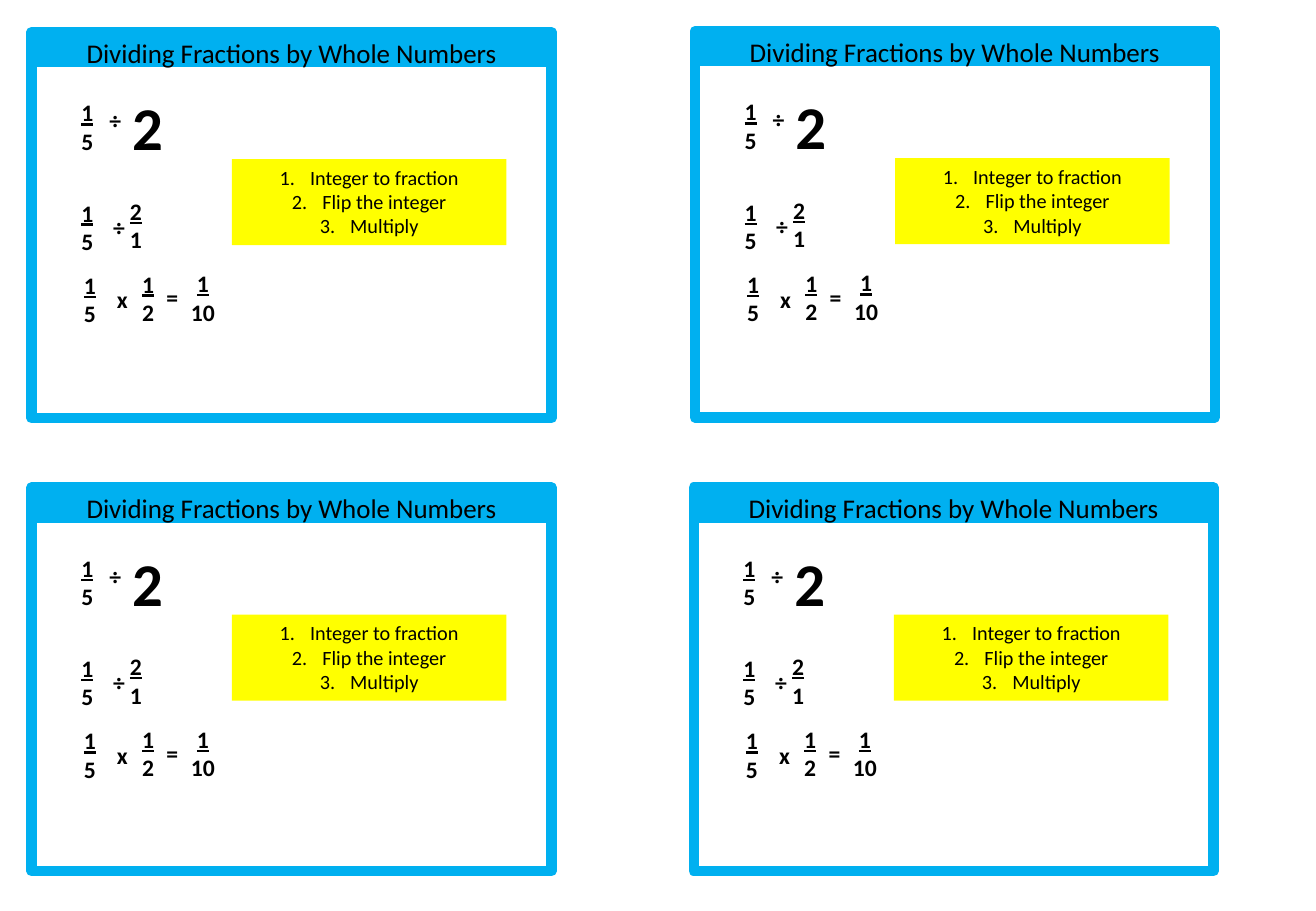
from dataclasses import dataclass

from lxml import etree
from pptx import Presentation
from pptx.dml.color import RGBColor
from pptx.enum.shapes import MSO_SHAPE
from pptx.enum.text import MSO_ANCHOR, PP_ALIGN
from pptx.oxml.ns import qn
from pptx.shapes.autoshape import Shape
from pptx.shapes.group import GroupShape
from pptx.text.text import TextFrame
from pptx.util import Pt

RECTANGLE = MSO_SHAPE.RECTANGLE
CENTER = PP_ALIGN.CENTER
TOP = MSO_ANCHOR.TOP

FONT = "Calibri"
BLUE, YELLOW, BLACK = "00B0F0", "FFFF00", "000000"
CARD_WIDTH = 308.2
FRACTION_SIZE = (34.6, 41)
OPERATOR_SIZE = (33, 24.3)
HEADING = "Dividing Fractions by Whole Numbers"
STEPS = ["Integer to fraction", "Flip the integer", "Multiply"]


@dataclass(frozen=True)
class Card:
    left: float
    top: float
    frame_height: float


@dataclass(frozen=True)
class Fraction:
    numerator: str
    denominator: str
    x: float
    y: float


@dataclass(frozen=True)
class Operator:
    sign: str
    x: float
    y: float


CARDS = [
    Card(18.7, 18, 229),
    Card(411.8, 17.5, 229),
    Card(18.7, 288, 227.5),
    Card(411.1, 288, 227.5),
]

# Places are measured from the top left corner of a card.
FRACTIONS = [
    Fraction("1", "5", 15.8, 36.7),
    Fraction("1", "5", 15.8, 96.1),
    Fraction("2", "1", 44.6, 95),
    Fraction("1", "5", 17.3, 139),
    Fraction("1", "2", 51.8, 138.2),
    Fraction("1", "10", 84.2, 138),
]
OPERATORS = [
    Operator("÷", 33.1, 41.3),
    Operator("÷", 35.3, 104.4),
    Operator("x", 37.4, 147.6),
    Operator("=", 67, 146.4),
]


def color(hex_code: str) -> RGBColor:
    return RGBColor.from_string(hex_code)


def write(frame: TextFrame, lines: list[str], size: float, bold: bool = False) -> None:
    frame.word_wrap = True
    frame.vertical_anchor = TOP
    frame.text = "\n".join(lines)
    for paragraph in frame.paragraphs:
        paragraph.alignment = CENTER
        for run in paragraph.runs:
            run.font.name = FONT
            run.font.size = Pt(size)
            run.font.bold = bold
            run.font.color.rgb = color(BLACK)


def add_rectangle(group: GroupShape, x: float, y: float, width: float, height: float,
                  fill: str | None = None, line: str | None = None,
                  line_width: float = 0.75) -> Shape:
    rectangle = group.shapes.add_shape(RECTANGLE, Pt(x), Pt(y), Pt(width), Pt(height))
    rectangle.shadow.inherit = False
    if fill:
        rectangle.fill.solid()
        rectangle.fill.fore_color.rgb = color(fill)
    else:
        rectangle.fill.background()
    if line:
        rectangle.line.color.rgb = color(line)
        rectangle.line.width = Pt(line_width)
    else:
        rectangle.line.fill.background()
    return rectangle


def add_text(group: GroupShape, x: float, y: float, size: tuple[float, float],
             lines: list[str], font_size: float = 14) -> TextFrame:
    width, height = size
    frame = group.shapes.add_textbox(Pt(x), Pt(y), Pt(width), Pt(height)).text_frame
    write(frame, lines, font_size, bold=True)
    return frame


def number_paragraphs(frame: TextFrame) -> None:
    for paragraph in frame.paragraphs:
        properties = paragraph._p.get_or_add_pPr()
        properties.set("marL", str(Pt(18)))
        properties.set("indent", str(Pt(-18)))
        etree.SubElement(properties, qn("a:buFont"), typeface="+mj-lt")
        etree.SubElement(properties, qn("a:buAutoNum"), type="arabicPeriod")


def add_card(group: GroupShape, card: Card) -> None:
    left, top = card.left, card.top
    add_rectangle(group, left, top + 1, CARD_WIDTH, card.frame_height,
                  line=BLUE, line_width=6)
    heading = add_rectangle(group, left, top, CARD_WIDTH, 21.6, fill=BLUE, line=BLUE)
    write(heading.text_frame, [HEADING], 16)

    add_text(group, left + 52.6, top + 31.7, (29.5, 51), ["2"], 36)

    steps = add_rectangle(group, left + 118.8, top + 76.3, 162.7, 51, fill=YELLOW)
    write(steps.text_frame, STEPS, 12)
    number_paragraphs(steps.text_frame)

    for fraction in FRACTIONS:
        frame = add_text(group, left + fraction.x, top + fraction.y, FRACTION_SIZE,
                         [fraction.numerator, fraction.denominator])
        frame.paragraphs[0].runs[0].font.underline = True
    for operator in OPERATORS:
        add_text(group, left + operator.x, top + operator.y, OPERATOR_SIZE,
                 [operator.sign])


def main() -> None:
    presentation = Presentation()
    presentation.slide_width = Pt(780)
    presentation.slide_height = Pt(540)
    slide = presentation.slides.add_slide(presentation.slide_layouts.get_by_name("Blank"))
    for card in CARDS:
        add_card(slide.shapes.add_group_shape(), card)
    presentation.save("out.pptx")


if __name__ == "__main__":
    main()
